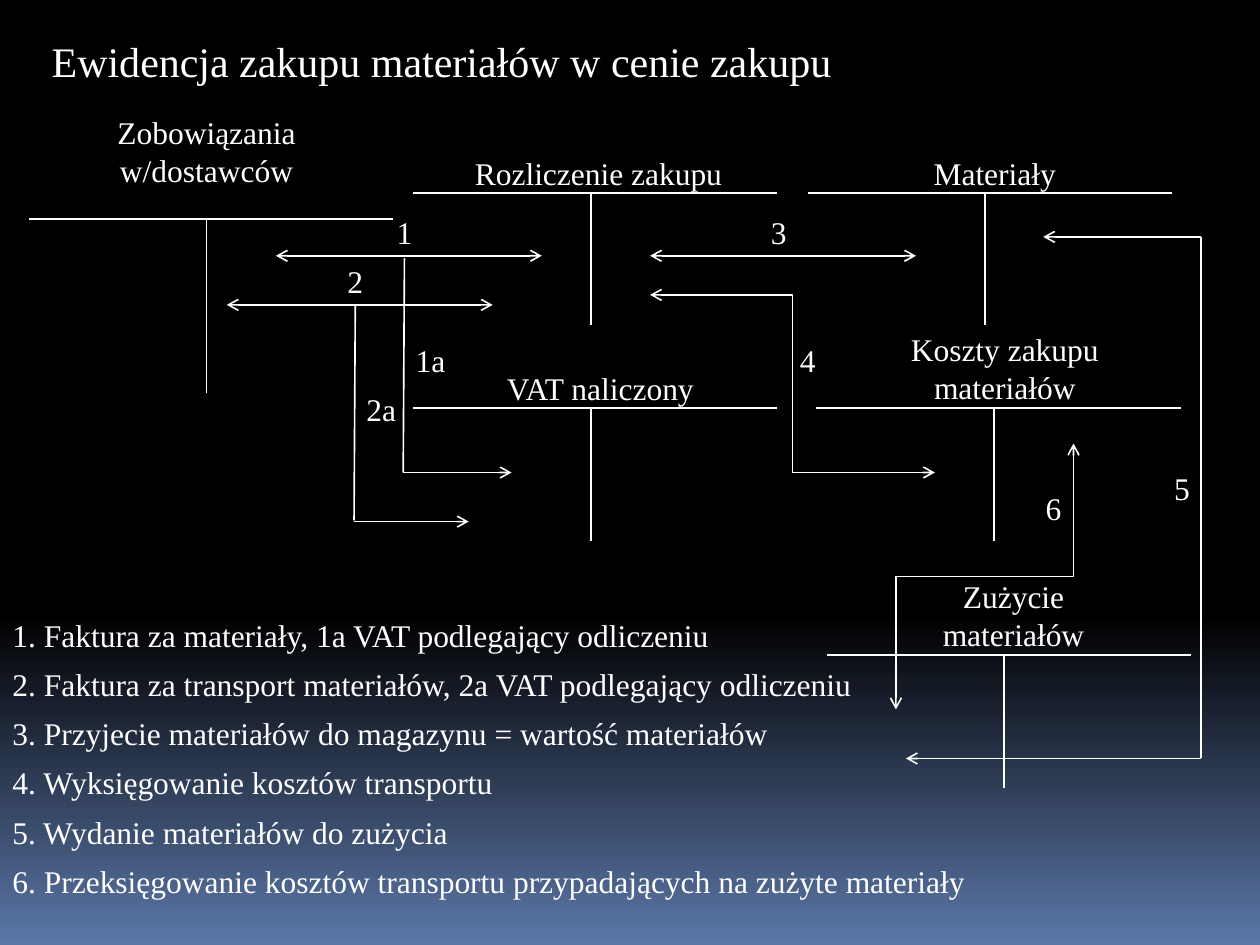
from pptx import Presentation
from pptx.dml.color import RGBColor as RGB
from pptx.enum.shapes import MSO_CONNECTOR as CON
from pptx.enum.text import MSO_ANCHOR as ANC, MSO_AUTO_SIZE as AUTO, PP_ALIGN as AL
from pptx.oxml.ns import qn
from pptx.util import Inches, Pt
from lxml.etree import SubElement as Sub

HEX = {"ink": "FFFFFF", "dark": "000000", "blue": "5B77A8"}
FONT = "Times New Roman"
TITLE = "Ewidencja zakupu materiałów w cenie zakupu"

# name, bar left, bar top, stem length, label (inset, width, height), alignment
ACCOUNTS = [
    ("Rozliczenie zakupu", 3.28, 1.53, 1.05, (0.39, 2.19, 0.4), AL.LEFT),
    ("Zobowiązania w/dostawców", 0.23, 1.74, 1.38, (0.16, 2.5, 0.93), AL.CENTER),
    ("VAT naliczony", 3.28, 3.24, 1.05, (0.39, 2.19, 0.4), AL.CENTER),
    ("Materiały", 6.41, 1.53, 1.05, (0.39, 2.19, 0.4), AL.CENTER),
    # narrow enough that the two words wrap onto two lines
    ("Zużycie materiałów", 6.56, 5.2, 1.05, (0.42, 2.13, 0.71), AL.CENTER),
    ("Koszty zakupu materiałów", 6.48, 3.24, 1.05, (0.4, 2.19, 0.71), AL.CENTER),
]
BAR, STEM = 2.89, 1.41

# x1, y1, x2, y2, ends that carry an arrowhead
FLOWS = [
    (2.19, 2.03, 4.3, 2.03, ("head", "tail")),
    (3.21, 2.05, 3.2, 3.75, ()),
    (3.2, 3.75, 4.06, 3.75, ("tail",)),
    (1.8, 2.42, 3.91, 2.42, ("head", "tail")),
    (2.82, 2.42, 2.81, 4.13, ()),
    (2.81, 4.14, 3.72, 4.14, ("tail",)),
    (5.16, 2.03, 7.27, 2.03, ("head", "tail")),
    (9.53, 1.88, 8.28, 1.88, ("tail",)),
    (9.53, 1.88, 9.53, 6.02, ()),
    (9.53, 6.02, 7.19, 6.02, ("tail",)),
]
# x1, y1, x2, y2 before turning, turn in degrees
BENDS = [(5.16, 2.34, 7.42, 3.75, 0), (6.76, 3.87, 8.87, 5.28, 90)]

MARKS = [
    ("1", 3.05, 1.64), ("1a", 3.2, 2.66), ("2", 2.66, 2.03), ("2a", 2.81, 3.05),
    ("3", 6.02, 1.64), ("4", 6.25, 2.66), ("5", 9.22, 3.67), ("6", 8.2, 3.83),
]
LEGEND = [
    ("1. Faktura za materiały, 1a VAT podlegający odliczeniu", 5.79),
    ("2. Faktura za transport materiałów, 2a VAT podlegający odliczeniu", 6.89),
    ("3. Przyjecie materiałów do magazynu = wartość materiałów", 6.26),
    ("4. Wyksięgowanie kosztów transportu", 4.05),
    ("5. Wydanie materiałów do zużycia", 3.7),
    ("6. Przeksięgowanie kosztów transportu przypadających na zużyte materiały", 7.85),
]
LEGEND_TOP, LEGEND_STEP = 4.84, 0.39


def write(shape, text, size=18, wrap=True, align=AL.LEFT):
    frame = shape.text_frame
    look = {"word_wrap": wrap, "auto_size": AUTO.SHAPE_TO_FIT_TEXT,
            "vertical_anchor": ANC.TOP}
    for key, val in look.items():
        setattr(frame, key, val)
    para = frame.paragraphs[0]
    para.alignment = align
    run = para.add_run()
    run.text = text
    for key, val in {"name": FONT, "size": Pt(size)}.items():
        setattr(run.font, key, val)
    run.font.color.rgb = RGB.from_string(HEX["ink"])


def label(slide, text, x, y, w, h=0.4, **look):
    box = slide.shapes.add_textbox(*map(Inches, (x, y, w, h)))
    write(box, text, **look)


def link(slide, x1, y1, x2, y2, ends=(), kind=CON.STRAIGHT, turn=0):
    con = slide.shapes.add_connector(kind, *map(Inches, (x1, y1, x2, y2)))
    con.line.width = Pt(0.94)
    con.line.color.rgb = RGB.from_string(HEX["ink"])
    props = con._element.spPr
    if turn:
        props.find(qn("a:xfrm")).set("rot", str(turn * 60000))
    for end in ends:
        Sub(props.find(qn("a:ln")), qn(f"a:{end}End")).set("type", "arrow")
    Sub(props, qn("a:effectLst"))


def main():
    deck = Presentation()
    deck.slide_width, deck.slide_height = Inches(10), Inches(7.5)
    slide = deck.slides.add_slide(deck.slide_layouts[5])

    fill = slide.background.fill
    fill.gradient()
    fill.gradient_angle = 270
    for stop, at, name in zip(fill.gradient_stops, (0.65, 1), ("dark", "blue")):
        stop.position = at
        stop.color.rgb = RGB.from_string(HEX[name])

    title = slide.shapes.title
    spot = {"left": 0.31, "top": 0.23, "width": 7.97, "height": 0.51}
    for key, val in spot.items():
        setattr(title, key, Inches(val))
    write(title, TITLE, size=24)

    for name, x, y, stem, (inset, w, h), align in ACCOUNTS:
        link(slide, x, y, x + BAR, y)
        link(slide, x + STEM, y, x + STEM, y + stem)
        label(slide, name, x + inset, y + 0.04 - h, w, h, align=align)
    for *ends, heads in FLOWS:
        link(slide, *ends, heads)
    for *ends, turn in BENDS:
        link(slide, *ends, ("head", "tail"), CON.ELBOW, turn)
    for text, x, y in MARKS:
        label(slide, text, x, y, 0.22 + 0.11 * len(text), wrap=False)
    for i, (text, w) in enumerate(LEGEND):
        label(slide, text, 0, LEGEND_TOP + i * LEGEND_STEP, w, wrap=False)

    deck.save("out.pptx")


if __name__ == "__main__":
    main()
